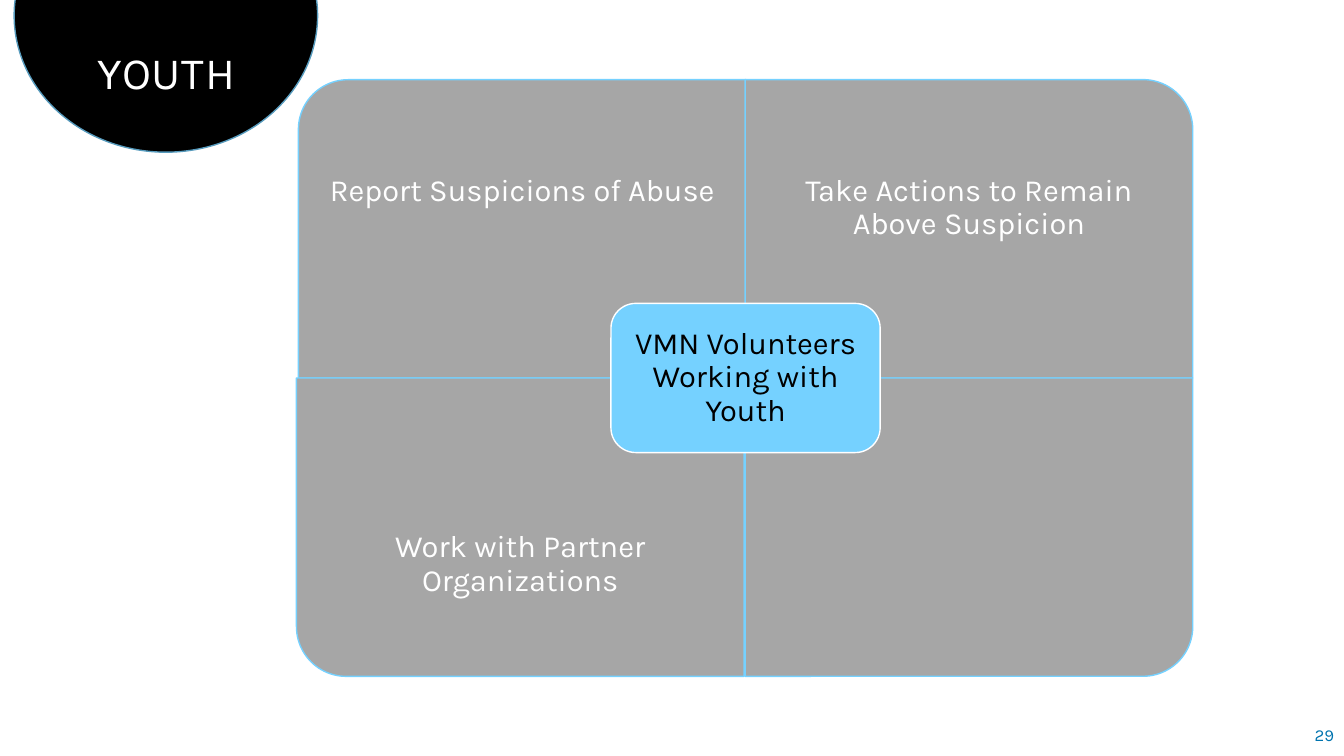
from pptx import Presentation
from pptx.dml.color import RGBColor
from pptx.enum.shapes import MSO_SHAPE as SHAPE
from pptx.enum.text import MSO_ANCHOR as ANCHOR, MSO_AUTO_SIZE as AUTO, PP_ALIGN as ALIGN
from pptx.util import Inches, Pt

COLORS = {"white": "FFFFFF", "black": "000000", "gray": "A6A6A6",
          "sky": "75D1FF", "steel": "579BBD", "blue": "0074AF"}
FONT = "Karla"
GRID_TOP, CELL_W, CELL_H = 0.79, 4.44, 2.96
LABEL_H = 2.22
LINE_H = 0.33
# left, row, rotation, label, extra top inset
QUADRANTS = [
    (2.96, 0, 270, "Report Suspicions of Abuse", 0),
    (7.39, 0, 0, "Take Actions to Remain Above Suspicion", LINE_H),
    (2.94, 1, 180, "Work with Partner Organizations", 0),
    (7.39, 1, 90, None, 0),
]


def rgb(name):
    return RGBColor.from_string(COLORS[name])


def add_shape(s, kind, box, fill, line, rotation=0):
    sp = s.shapes.add_shape(kind, *map(Inches, box))
    sp.rotation = rotation
    sp.shadow.inherit = False
    sp.fill.solid()
    sp.fill.fore_color.rgb = rgb(fill)
    sp.line.color.rgb = rgb(line)
    sp.line.width = Pt(1)
    return sp


def write_text(sp, text, size, color, insets, anchor=ANCHOR.MIDDLE,
               align=ALIGN.CENTER, spacing=0.9, wrap=True):
    """Fill a shape with one formatted paragraph; insets run left, top, right, bottom."""
    tf = sp.text_frame
    tf.auto_size = AUTO.NONE
    tf.word_wrap = wrap
    tf.vertical_anchor = anchor
    for side, inset in zip(("left", "top", "right", "bottom"), insets):
        setattr(tf, f"margin_{side}", Inches(inset))
    p = tf.paragraphs[0]
    p.alignment = align
    p.line_spacing = spacing
    r = p.add_run()
    r.text = text
    for name, value in {"name": FONT, "size": Pt(size), "bold": False}.items():
        setattr(r.font, name, value)
    r.font.color.rgb = rgb(color)
    return r


def add_text(s, box, *args, **kwargs):
    write_text(s.shapes.add_textbox(*map(Inches, box)), *args, **kwargs)


def add_quadrant(s, left, row, rotation, label, extra_top):
    """Draw one cell, its rounded corner turned outward, with its label."""
    top = GRID_TOP + row * CELL_H
    w, h = (CELL_H, CELL_W) if rotation % 180 else (CELL_W, CELL_H)
    box = (left + (CELL_W - w) / 2, top + (CELL_H - h) / 2, w, h)
    add_shape(s, SHAPE.ROUND_1_RECTANGLE, box, "gray", "sky", rotation)
    if label:
        label_top = top + row * (CELL_H - LABEL_H)
        add_text(s, (left, label_top, CELL_W, LABEL_H), label, 22, "white",
                 (0.17, 0.17 + extra_top, 0.17, 0.17))


def add_title(s, text):
    add_shape(s, SHAPE.OVAL, (0.14, -1.2, 3.01, 2.71), "black", "steel")
    title = s.shapes.title
    for name, value in {"left": 0.35, "top": 0.04, "width": 2.6, "height": 1}.items():
        setattr(title, name, Inches(value))
    r = write_text(title, text, 32, "white", (0.16, 0.46, 0.16, 0.05), ANCHOR.TOP)
    r.font._element.set("spc", "60")
    s.shapes._spTree.append(title._element)  # bring in front of the oval


def main():
    prs = Presentation()
    prs.slide_width, prs.slide_height = Inches(13.33), Inches(7.5)
    s = prs.slides.add_slide(prs.slide_layouts[5])

    add_text(s, (12.76, 7.09, 0.57, 0.4), "29", 12, "blue", (0.1, 0.05, 0.1, 0.05),
             align=ALIGN.RIGHT, spacing=1.0, wrap=False)
    for quadrant in QUADRANTS:
        add_quadrant(s, *quadrant)
    hub = add_shape(s, SHAPE.ROUNDED_RECTANGLE, (6.06, 3.01, 2.67, 1.48), "sky", "white")
    write_text(hub, "VMN Volunteers Working with Youth", 22, "black", (0.09,) * 4)
    add_title(s, "YOUTH")

    prs.save("out.pptx")


if __name__ == "__main__":
    main()
